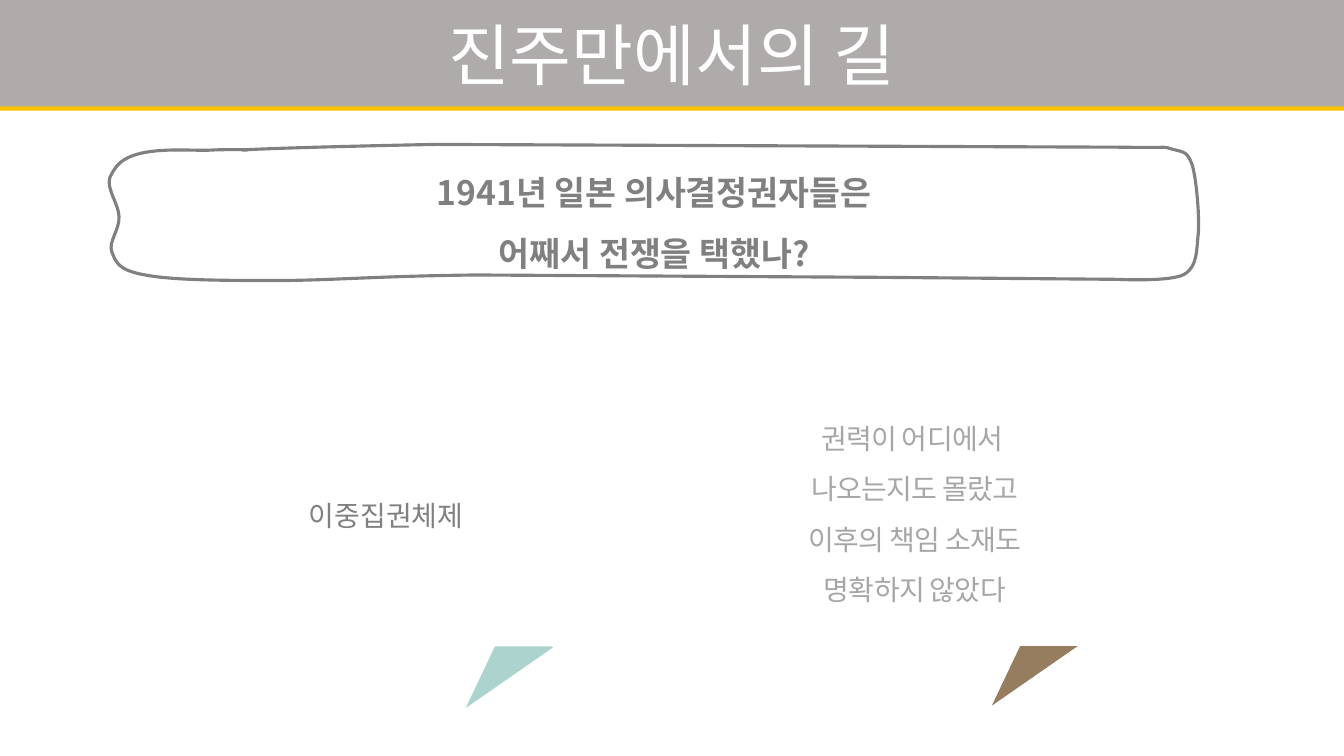
from dataclasses import dataclass

import lxml.etree
import pptx
import pptx.dml.color
import pptx.enum.shapes
import pptx.enum.text
import pptx.oxml
import pptx.oxml.ns
import pptx.util

Cm = pptx.util.Cm
qn = pptx.oxml.ns.qn
Point = tuple[float, float]
KOREAN_FONT = "Noto Sans CJK KR"
WHITE = "FFFFFF"
GRAY = "808080"


@dataclass
class TextStyle:
    size: int
    color: str
    font: str = KOREAN_FONT
    bold: bool = False
    line_spacing: float = 1.5
    tracking: float = 0


@dataclass
class Card:
    left: float
    top: float
    width: float
    height: float
    lines: list[str]
    style: TextStyle


@dataclass
class Tail:
    """Coloured triangle that shows below a card."""
    left: float
    top: float
    color: str


TITLE_STYLE = TextStyle(48, WHITE, line_spacing=1.0)
QUESTION_STYLE = TextStyle(24, GRAY, bold=True)
QUESTION = ["1941년 일본 의사결정권자들은", "어째서 전쟁을 택했나?"]

TAILS = [Tail(25.17, 15.54, "967D5F"), Tail(11.91, 15.6, "ACD3CE")]
CARDS = [
    Card(5.5, 9.25, 8.46, 7.04, ["이중집권체제"], TextStyle(20, GRAY)),
    Card(18.85, 9.19, 8.41, 7.09,
         ["권력이 어디에서 ", "나오는지도 몰랐고", "이후의 책임 소재도", "명확하지 않았다"],
         TextStyle(20, "A6A6A6", font="Arial", tracking=-0.5)),
]

# One point is a straight segment; three points are a cubic curve.
BANNER_START = (6.1, 3.78)
BANNER_SEGMENTS: list[list[Point]] = [
    [(7.32, 3.71), (10.97, 3.64), (10.97, 3.64)],
    [(20.73, 3.68)],
    [(28.24, 3.71)],
    [(29.72, 3.73), (29.24, 3.68), (29.54, 3.76)],
    [(29.85, 3.84), (29.92, 3.81), (30.05, 4.17)],
    [(30.15, 4.52), (30.23, 5.41), (30.2, 5.87)],
    [(30.15, 6.32), (30.18, 6.71), (29.85, 6.91)],
    [(29.51, 7.11), (28.17, 7.04), (28.17, 7.04)],
    [(22.28, 6.99)],
    [(11.99, 6.93)],
    [(9.42, 6.96), (8.33, 7.07), (6.93, 7.07)],
    [(5.56, 7.07), (4.34, 7.06), (3.66, 6.93)],
    [(2.97, 6.81), (2.92, 6.6), (2.82, 6.35)],
    [(2.72, 6.1), (3.02, 5.79), (3.0, 5.46)],
    [(3.0, 5.16), (2.67, 4.75), (2.77, 4.47)],
    [(2.9, 4.22), (3.02, 3.96), (3.66, 3.84)],
    [(4.29, 3.73), (4.98, 3.81), (5.38, 3.78)],
    [(5.82, 3.76), (6.58, 3.78), (6.1, 3.78)],
]


def rgb(color: str) -> pptx.dml.color.RGBColor:
    return pptx.dml.color.RGBColor.from_string(color)


def fill_shape(shape, color: str) -> None:
    shape.fill.solid()
    shape.fill.fore_color.rgb = rgb(color)


def place(shape, left: float, top: float, width: float, height: float) -> None:
    shape.left, shape.top = Cm(left), Cm(top)
    shape.width, shape.height = Cm(width), Cm(height)


def write_lines(shape, lines: list[str], style: TextStyle) -> None:
    frame = shape.text_frame
    frame.word_wrap = True
    frame.auto_size = pptx.enum.text.MSO_AUTO_SIZE.NONE
    frame.vertical_anchor = pptx.enum.text.MSO_ANCHOR.MIDDLE
    for index, line in enumerate(lines):
        paragraph = frame.add_paragraph() if index else frame.paragraphs[0]
        paragraph.alignment = pptx.enum.text.PP_ALIGN.CENTER
        paragraph.line_spacing = style.line_spacing
        run = paragraph.add_run()
        run.text = line
        run.font.size = pptx.util.Pt(style.size)
        run.font.bold = style.bold
        run.font.name = style.font
        run.font.color.rgb = rgb(style.color)
        properties = run.font._element
        properties.set("kern", "0")
        if style.tracking:
            properties.set("spc", str(round(style.tracking * 100)))
        east_asian = pptx.oxml.parse_xml(
            f'<a:ea {pptx.oxml.ns.nsdecls("a")} typeface="{KOREAN_FONT}"/>')
        properties.find(qn("a:latin")).addnext(east_asian)


def add_header(slide) -> None:
    title = slide.shapes.title
    place(title, 0, 0, 33.87, 2.68)
    fill_shape(title, "AFABAB")
    yellow_edge = pptx.oxml.parse_xml(
        f'<a:effectLst {pptx.oxml.ns.nsdecls("a")}>'
        f'<a:outerShdw blurRad="0" dist="{pptx.util.Pt(3)}" dir="5400000" algn="t" '
        'rotWithShape="0"><a:srgbClr val="FFC000"/></a:outerShdw></a:effectLst>')
    title._element.spPr.append(yellow_edge)
    write_lines(title, ["진주만에서의 길"], TITLE_STYLE)


def bend_segments(shape, segments: list[list[Point]]) -> None:
    """Turn the straight segments that have control points into cubic curves."""
    lines = list(shape._element.iter(qn("a:lnTo")))
    for line, segment in zip(lines, segments):
        if len(segment) == 1:
            continue
        curve = lxml.etree.Element(qn("a:cubicBezTo"))
        for x, y in segment:
            lxml.etree.SubElement(curve, qn("a:pt"), x=str(Cm(x) - shape.left),
                                  y=str(Cm(y) - shape.top))
        line.getparent().replace(line, curve)


def add_question_banner(slide) -> None:
    builder = slide.shapes.build_freeform(*map(Cm, BANNER_START))
    corners = [tuple(map(Cm, segment[-1])) for segment in BANNER_SEGMENTS]
    builder.add_line_segments(corners, close=True)
    banner = builder.convert_to_shape()
    bend_segments(banner, BANNER_SEGMENTS)
    banner.shadow.inherit = False
    fill_shape(banner, WHITE)
    banner.line.color.rgb = rgb(GRAY)
    banner.line.width = pptx.util.Pt(2.25)
    write_lines(banner, QUESTION, QUESTION_STYLE)


def add_plain_shape(slide, kind, box: tuple[float, float, float, float], color: str):
    shape = slide.shapes.add_shape(kind, *map(Cm, box))
    shape.shadow.inherit = False
    fill_shape(shape, color)
    shape.line.fill.background()
    return shape


def add_tail(slide, tail: Tail) -> None:
    triangle = add_plain_shape(slide, pptx.enum.shapes.MSO_SHAPE.ISOSCELES_TRIANGLE,
                               (tail.left, tail.top, 1.37, 2.57), tail.color)
    triangle.adjustments[0] = 0.55
    triangle.rotation = 218.9


def add_card(slide, card: Card) -> None:
    rectangle = add_plain_shape(slide, pptx.enum.shapes.MSO_SHAPE.RECTANGLE,
                                (card.left, card.top, card.width, card.height), WHITE)
    write_lines(rectangle, card.lines, card.style)


def main() -> None:
    presentation = pptx.Presentation()
    presentation.slide_width, presentation.slide_height = Cm(33.87), Cm(19.05)
    slide = presentation.slides.add_slide(presentation.slide_layouts[5])
    add_header(slide)
    add_question_banner(slide)
    for tail in TAILS:
        add_tail(slide, tail)
    for card in CARDS:
        add_card(slide, card)
    presentation.save("out.pptx")


if __name__ == "__main__":
    main()
